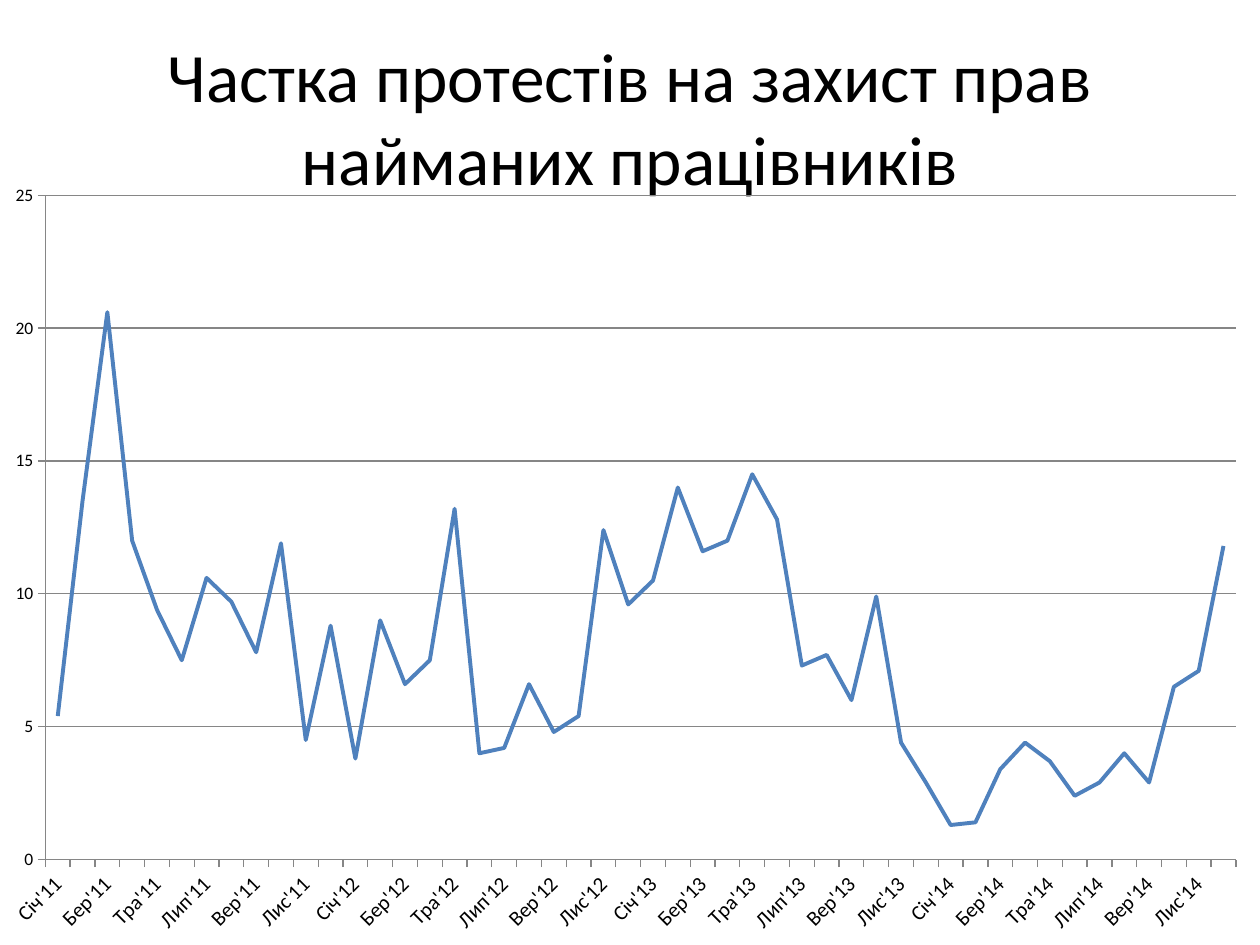
from lxml import etree
from pptx import Presentation
from pptx.chart.data import CategoryChartData
from pptx.dml.color import RGBColor
from pptx.enum.chart import XL_CHART_TYPE, XL_MARKER_STYLE, XL_TICK_MARK
from pptx.enum.text import MSO_ANCHOR, PP_ALIGN
from pptx.oxml import parse_xml
from pptx.oxml.ns import nsdecls, qn
from pptx.util import Inches, Pt

LINE, NO_MARKER = XL_CHART_TYPE.LINE, XL_MARKER_STYLE.NONE
OUTSIDE, NO_TICK = XL_TICK_MARK.OUTSIDE, XL_TICK_MARK.NONE
MIDDLE, CENTER = MSO_ANCHOR.MIDDLE, PP_ALIGN.CENTER

BLACK = RGBColor(0x00, 0x00, 0x00)
GRAY = RGBColor(0x86, 0x86, 0x86)
BLUE = RGBColor(0x4F, 0x81, 0xBD)

MONTHS = "Січ Лют Бер Кві Тра Чер Лип Сер Вер Жов Лис Гру".split()
YEARS = range(11, 15)
SHARES = [
    5.4, 13.5, 20.6, 12, 9.4, 7.5, 10.6, 9.7, 7.8, 11.9, 4.5, 8.8,
    3.8, 9, 6.6, 7.5, 13.2, 4, 4.2, 6.6, 4.8, 5.4, 12.4, 9.6,
    10.5, 14, 11.6, 12, 14.5, 12.8, 7.3, 7.7, 6, 9.9, 4.4, 2.9,
    1.3, 1.4, 3.4, 4.4, 3.7, 2.4, 2.9, 4, 2.9, 6.5, 7.1, 11.8,
]
PLOT_AREA = {"x": 0.036, "y": 0.086, "w": 0.945, "h": 0.81}


def apply(target, values):
    for name, value in values.items():
        setattr(target, name, value)


class SlideBuilder:
    font_name = "Calibri"

    def __init__(self, slide):
        self.slide = slide

    def style_font(self, font, size):
        apply(font, {"name": self.font_name, "size": Pt(size), "bold": False})
        font.color.rgb = BLACK

    def style_line(self, line, color, width):
        line.color.rgb = color
        line.width = Pt(width)

    def heading(self, text, box, size):
        frame = self.slide.shapes.add_textbox(*map(Inches, box)).text_frame
        apply(frame, {"word_wrap": True, "vertical_anchor": MIDDLE})
        paragraph = frame.paragraphs[0]
        paragraph.alignment = CENTER
        run = paragraph.add_run()
        run.text = text
        self.style_font(run.font, size)

    def line_chart(self, categories, name, values, box):
        data = CategoryChartData()
        data.categories = categories
        data.add_series(name, values)
        frame = self.slide.shapes.add_chart(LINE, *map(Inches, box), data)
        chart = frame.chart
        apply(chart, {"has_legend": False, "has_title": False})
        self.style_font(chart.font, 10)
        chart.plots[0].vary_by_categories = False

        series = chart.plots[0].series[0]
        series.smooth = False
        series.marker.style = NO_MARKER
        self.style_line(series.format.line, BLUE, 2.25)
        self.clear_background(chart)
        self.place_plot(chart)
        return chart

    def clear_background(self, chart):
        body = chart.element.find(qn("c:chart"))
        body.addnext(parse_xml(
            f"<c:spPr {nsdecls('c', 'a')}><a:noFill/>"
            "<a:ln><a:noFill/></a:ln></c:spPr>"))

    def place_plot(self, chart):
        plot_area = chart.element.find(".//" + qn("c:plotArea"))
        for old in plot_area.findall(qn("c:layout")):
            plot_area.remove(old)
        layout = etree.Element(qn("c:layout"))
        manual = etree.SubElement(layout, qn("c:manualLayout"))
        settings = {"layoutTarget": "inner", "xMode": "edge", "yMode": "edge"}
        for tag, value in {**settings, **PLOT_AREA}.items():
            etree.SubElement(manual, qn(f"c:{tag}")).set("val", str(value))
        plot_area.insert(0, layout)

    def axis(self, axis, size, values):
        apply(axis, {"major_tick_mark": OUTSIDE, "minor_tick_mark": NO_TICK,
                     **values})
        self.style_font(axis.tick_labels.font, size)
        self.style_line(axis.format.line, GRAY, 0.75)
        if axis.has_major_gridlines:
            self.style_line(axis.major_gridlines.format.line, GRAY, 0.75)

    def slant_labels(self, axis, degrees, every):
        body = axis._element.find(qn("c:txPr")).find(qn("a:bodyPr"))
        body.set("rot", str(degrees * 60000))
        body.set("vert", "horz")
        skip = etree.Element(qn("c:tickLblSkip"))
        skip.set("val", str(every))
        axis._element.find(qn("c:noMultiLvlLbl")).addprevious(skip)


def main():
    prs = Presentation()
    apply(prs, {"slide_width": Inches(10), "slide_height": Inches(7.5)})
    builder = SlideBuilder(prs.slides.add_slide(prs.slide_layouts[6]))

    # Heading
    builder.heading("Частка протестів на захист прав найманих працівників",
                    (0.5, 0.3, 9, 1.25), 39.6)

    # Monthly share of protests
    months = [f"{month}'{year}" for year in YEARS for month in MONTHS]
    chart = builder.line_chart(months, "Series 1", SHARES, (0, 0.99, 10, 6.51))

    # Axes
    builder.axis(chart.category_axis, 12, {"has_major_gridlines": False})
    builder.slant_labels(chart.category_axis, -45, 2)
    builder.axis(chart.value_axis, 10, {
        "has_major_gridlines": True, "minimum_scale": 0,
        "maximum_scale": 25, "major_unit": 5})
    apply(chart.value_axis.tick_labels,
          {"number_format": "0", "number_format_is_linked": False})

    prs.save("out.pptx")


if __name__ == "__main__":
    main()
